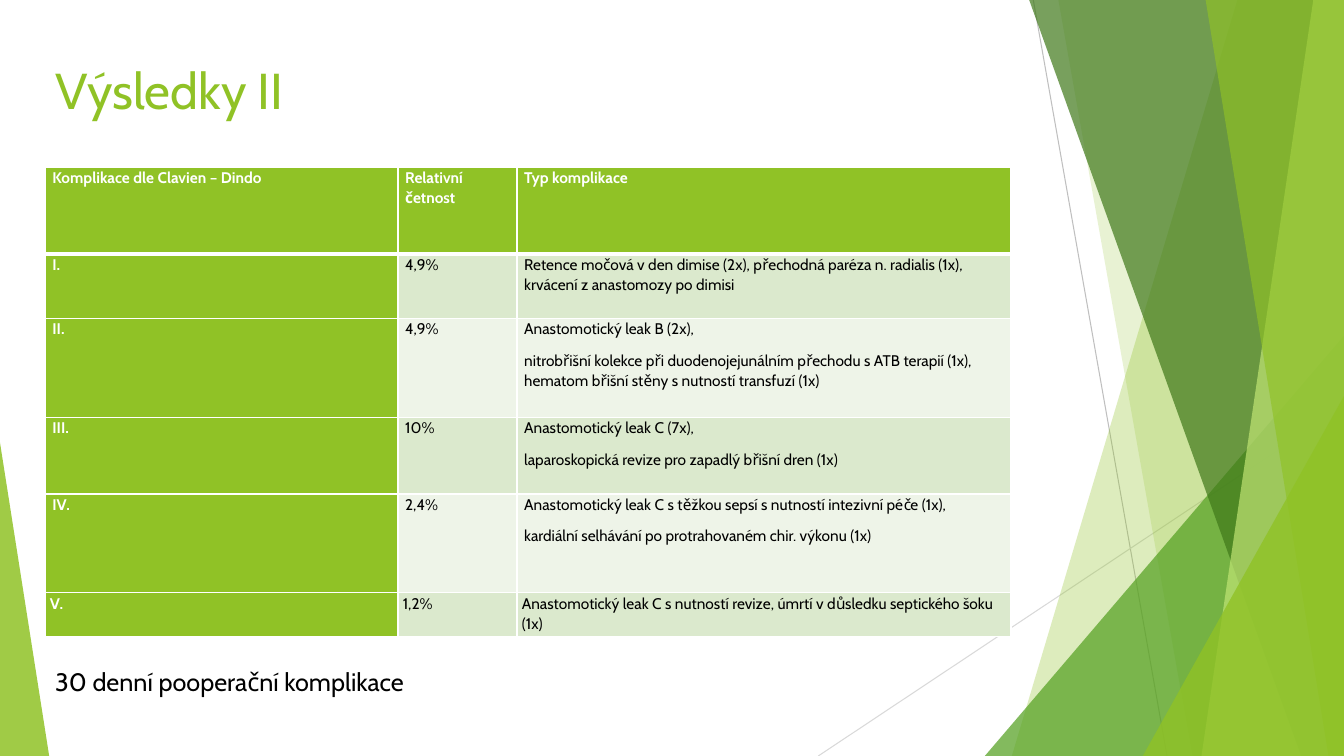
from lxml.etree import SubElement
from pptx import Presentation
from pptx.dml.color import RGBColor
from pptx.enum.shapes import MSO_CONNECTOR as Connector, MSO_SHAPE as Preset
from pptx.enum.text import MSO_ANCHOR as Anchor, PP_ALIGN as Align
from pptx.oxml.ns import qn
from pptx.util import Cm, Pt

FONT = "Cabin"
PAGE_WIDTH, PAGE_HEIGHT = 33.87, 19.05
LEFT = 1.14
COLORS = {
    "lime": "90C226", "leaf": "54A021", "forest": "3F7819", "pale": "C0E474",
    "band_dark": "DBE9CD", "band_light": "EEF4E8", "white": "FFFFFF",
    "black": "000000", "grey": "BFBFBF", "light_grey": "D9D9D9",
}
COLUMN_WIDTHS = [8.89, 3, 12.45]
ROW_HEIGHTS = [2.18, 1.63, 2.49, 1.93, 2.49, 1.09]
ROWS = [
    ("Komplikace dle Clavien – Dindo", "Relativní četnost", ["Typ komplikace"]),
    ("I.", "4,9%", ["Retence močová v den dimise (2x), přechodná paréza n. radialis (1x), "
                    "krvácení z anastomozy po dimisi"]),
    ("II.", "4,9%", ["Anastomotický leak B (2x),",
                     "nitrobřišní kolekce při duodenojejunálním přechodu s ATB terapií (1x), "
                     "hematom břišní stěny s nutností transfuzí (1x)"]),
    ("III.", "10%", ["Anastomotický leak C (7x),",
                     "laparoskopická revize pro zapadlý břišní dren (1x)"]),
    ("IV.", "2,4%", ["Anastomotický leak C s těžkou sepsí s nutností intezivní péče (1x),",
                     "kardiální selhávání po protrahovaném chir. výkonu (1x)"]),
    ("V.", "1,2%", ["Anastomotický leak C s nutností revize, úmrtí v důsledku "
                    "septického šoku (1x)"]),
]


def rgb(color):
    """Return the named colour."""
    return RGBColor.from_string(COLORS[color])


def add_span(para, text, size, color, bold=False):
    """Add one formatted run to a paragraph."""
    span = para.add_run()
    span.text = text
    span.font.name = FONT
    span.font.size = Pt(size)
    span.font.bold = bold
    span.font.color.rgb = rgb(color)


def paint(shape, color, opacity):
    """Give a shape a translucent fill without line or shadow."""
    shape.shadow.inherit = False
    shape.line.fill.background()
    shape.fill.solid()
    shape.fill.fore_color.rgb = rgb(color)
    fill_color = shape.fill._xPr.find(qn("a:solidFill"))[0]
    SubElement(fill_color, qn("a:alpha"), val=str(opacity * 1000))


def add_line(page, start, end, color):
    """Add a thin straight line."""
    line = page.shapes.add_connector(Connector.STRAIGHT, *map(Cm, start + end))
    line.line.color.rgb = rgb(color)
    line.line.width = Pt(0.75)
    SubElement(line._element.spPr, qn("a:effectLst"))


def add_shard(page, top_left, bottom_left, color, opacity):
    """Add a full-height shard that reaches the right edge."""
    top = Cm(-0.02)
    right, bottom = Cm(PAGE_WIDTH), Cm(PAGE_HEIGHT)
    builder = page.shapes.build_freeform(Cm(top_left), top)
    builder.add_line_segments([(right, top), (right, bottom), (Cm(bottom_left), bottom)])
    paint(builder.convert_to_shape(), color, opacity)


def add_triangle(page, left, top, right, peak, color, opacity):
    """Add a triangle that stands on the bottom edge."""
    triangle = page.shapes.add_shape(
        Preset.ISOSCELES_TRIANGLE, Cm(left), Cm(top), Cm(right - left), Cm(PAGE_HEIGHT - top))
    triangle.adjustments[0] = peak
    paint(triangle, color, opacity)


def add_decoration(page):
    """Add the green shards and fine lines."""
    add_line(page, (26.04, 0), (29.41, PAGE_HEIGHT), "grey")
    add_line(page, (PAGE_WIDTH, 10.24), (20.62, PAGE_HEIGHT), "light_grey")
    add_shard(page, 31.19, 25.5, "lime", 30)
    add_shard(page, 26.67, 30.05, "lime", 20)
    add_triangle(page, 24.82, 8.46, PAGE_WIDTH, 1, "leaf", 72)
    add_shard(page, 25.93, 32.79, "forest", 70)
    add_shard(page, 33.1, 30.28, "pale", 70)
    add_shard(page, 30.38, 33.48, "lime", 65)
    add_triangle(page, 28.8, 9.98, PAGE_WIDTH, 1, "lime", 80)
    add_triangle(page, 0, 11.15, 1.24, 0, "lime", 85)


def set_borders(cell, row):
    """Draw white borders, thicker beneath the header row."""
    properties = cell._tc.get_or_add_tcPr()
    for side in "LRTB":
        thick = (row, side) in [(0, "B"), (1, "T")]
        border = SubElement(properties, qn(f"a:ln{side}"), w=str(Pt(3 if thick else 1)))
        fill = SubElement(border, qn("a:solidFill"))
        SubElement(fill, qn("a:srgbClr"), val=COLORS["white"])


def fill_cell(cell, row, column, paragraphs):
    """Format one table cell and write its paragraphs."""
    heading = row == 0 or column == 0
    band = "band_dark" if row % 2 else "band_light"
    set_borders(cell, row)
    cell.fill.solid()
    cell.fill.fore_color.rgb = rgb("lime" if heading else band)
    cell.margin_left = cell.margin_right = Cm(0.12 if row == len(ROWS) - 1 else 0.18)
    cell.margin_top = cell.margin_bottom = 0
    for index, text in enumerate(paragraphs):
        para = cell.text_frame.add_paragraph() if index else cell.text_frame.paragraphs[0]
        para.line_spacing = 1.07
        para.space_after = Pt(8)
        add_span(para, text, 11, "white" if heading else "black", heading)


def add_complications(page):
    """Add the table of complications."""
    table = page.shapes.add_table(
        len(ROWS), len(COLUMN_WIDTHS), Cm(LEFT), Cm(4.22),
        Cm(sum(COLUMN_WIDTHS)), Cm(sum(ROW_HEIGHTS))).table
    table.first_col = True
    for column, width in zip(table.columns, COLUMN_WIDTHS):
        column.width = Cm(width)
    for row, (grade, share, kinds) in enumerate(ROWS):
        table.rows[row].height = Cm(ROW_HEIGHTS[row])
        for column, paragraphs in enumerate([[grade], [share], kinds]):
            fill_cell(table.cell(row, column), row, column, paragraphs)


def set_title(page, text):
    """Place and format the title."""
    title = page.shapes.title
    title.left, title.top, title.width, title.height = map(Cm, (LEFT, 1.37, 23.88, 3.66))
    title.text_frame.vertical_anchor = Anchor.TOP
    para = title.text_frame.paragraphs[0]
    para.alignment = Align.LEFT
    add_span(para, text, 36, "lime")


def add_note(page, text):
    """Add the note below the table."""
    box = page.shapes.add_textbox(Cm(LEFT), Cm(16.66), Cm(11.71), Cm(1.02))
    box.text_frame.word_wrap = True
    add_span(box.text_frame.paragraphs[0], text, 18, "black")


def main():
    """Build and save the slide."""
    deck = Presentation()
    deck.slide_width, deck.slide_height = Cm(PAGE_WIDTH), Cm(PAGE_HEIGHT)
    page = deck.slides.add_slide(deck.slide_layouts[5])
    add_decoration(page)
    set_title(page, "Výsledky II")
    add_complications(page)
    add_note(page, "30 denní pooperační komplikace")
    deck.save("out.pptx")


if __name__ == "__main__":
    main()
